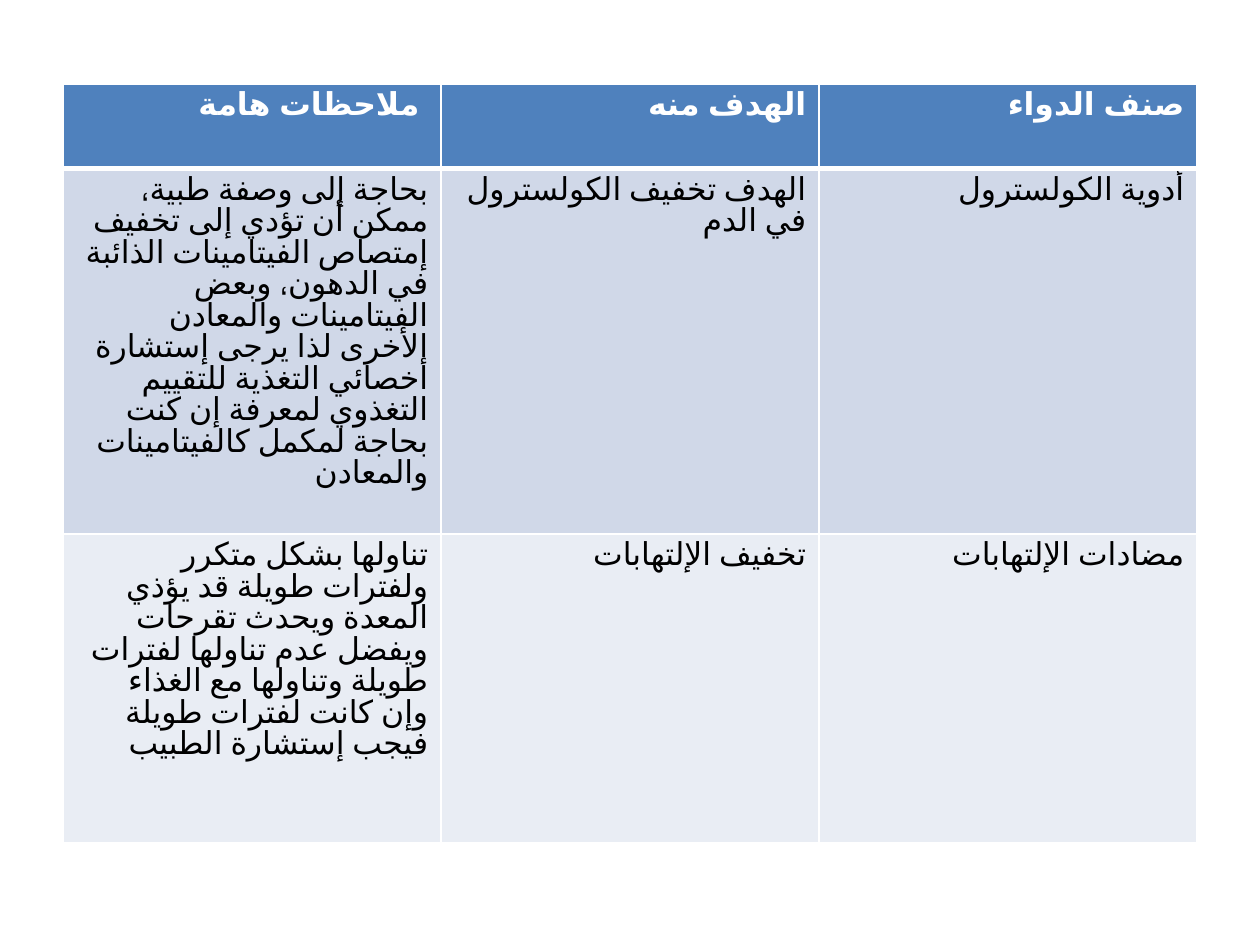
import pptx
import pptx.dml.color
import pptx.enum.lang
import pptx.enum.text
import pptx.oxml
import pptx.oxml.ns
import pptx.util
from pptx.util import Inches

WHITE, BLACK = "FFFFFF", "000000"
HEADER_FILL = "4F81BD"
BODY_FILLS = ["D0D8E8", "E9EDF4"]
ROW_HEIGHTS = [0.67, 2.9, 2.45]

# Each cell is a list of paragraphs
HEADINGS = [["ملاحظات هامة "], ["الهدف منه"], ["صنف الدواء"]]
MEDICINES = [
    [
        ["بحاجة إلى وصفة طبية، ممكن أن تؤدي إلى تخفيف إمتصاص الفيتامينات "
         "الذائبة في الدهون، وبعض الفيتامينات والمعادن الأخرى لذا يرجى "
         "إستشارة أخصائي التغذية للتقييم التغذوي لمعرفة إن كنت بحاجة "
         "لمكمل كالفيتامينات والمعادن "],
        ["الهدف تخفيف الكولسترول في الدم"],
        ["أدوية الكولسترول"],
    ],
    [
        ["تناولها بشكل متكرر ولفترات طويلة قد يؤذي المعدة ويحدث تقرحات",
         "ويفضل عدم تناولها لفترات طويلة وتناولها مع الغذاء وإن كانت "
         "لفترات طويلة فيجب إستشارة الطبيب"],
        ["تخفيف الإلتهابات"],
        ["مضادات الإلتهابات"],
    ],
]


def rgb(value):
    return pptx.dml.color.RGBColor.from_string(value)


def set_borders(cell, bottom_width):
    """Draw white cell borders; they must come before the fill."""
    properties = cell._tc.get_or_add_tcPr()
    widths = {"lnL": 1, "lnR": 1, "lnT": 1, "lnB": bottom_width}
    for position, (side, width) in enumerate(widths.items()):
        border = pptx.oxml.parse_xml(
            f'<a:{side} {pptx.oxml.ns.nsdecls("a")} w="{pptx.util.Pt(width)}">'
            f'<a:solidFill><a:srgbClr val="{WHITE}"/></a:solidFill></a:{side}>'
        )
        properties.insert(position, border)


def fill_cell(cell, texts, fill, color, heading):
    cell.fill.solid()
    cell.fill.fore_color.rgb = rgb(fill)
    set_borders(cell, 3 if heading else 1)
    frame = cell.text_frame
    for index, text in enumerate(texts):
        paragraph = frame.add_paragraph() if index else frame.paragraphs[0]
        paragraph.alignment = pptx.enum.text.PP_ALIGN.RIGHT
        if not heading:
            paragraph._p.get_or_add_pPr().set("rtl", "1")
        run = paragraph.add_run()
        run.text = text
        run.font.language_id = pptx.enum.lang.MSO_LANGUAGE_ID.ARABIC
        run.font.name = "Calibri"
        run.font.size = pptx.util.Pt(18)
        run.font.bold = heading
        run.font.color.rgb = rgb(color)


def add_medicine_table(slide, left, top, width, height):
    rows = [HEADINGS] + MEDICINES
    table = slide.shapes.add_table(
        len(rows), len(HEADINGS), left, top, width, height).table
    for row, row_height in zip(table.rows, ROW_HEIGHTS):
        row.height = Inches(row_height)

    # Heading row, then the medicines in alternating tints
    for row_index, contents in enumerate(rows):
        heading = row_index == 0
        fill = HEADER_FILL if heading else BODY_FILLS[(row_index - 1) % 2]
        for column_index, texts in enumerate(contents):
            fill_cell(table.cell(row_index, column_index), texts, fill,
                      WHITE if heading else BLACK, heading)


def main():
    presentation = pptx.Presentation()
    presentation.slide_width = Inches(10)
    presentation.slide_height = Inches(7.5)
    slide = presentation.slides.add_slide(presentation.slide_layouts[6])
    add_medicine_table(slide, Inches(0.5), Inches(0.67),
                       Inches(9), Inches(sum(ROW_HEIGHTS)))
    presentation.save("out.pptx")


if __name__ == "__main__":
    main()
